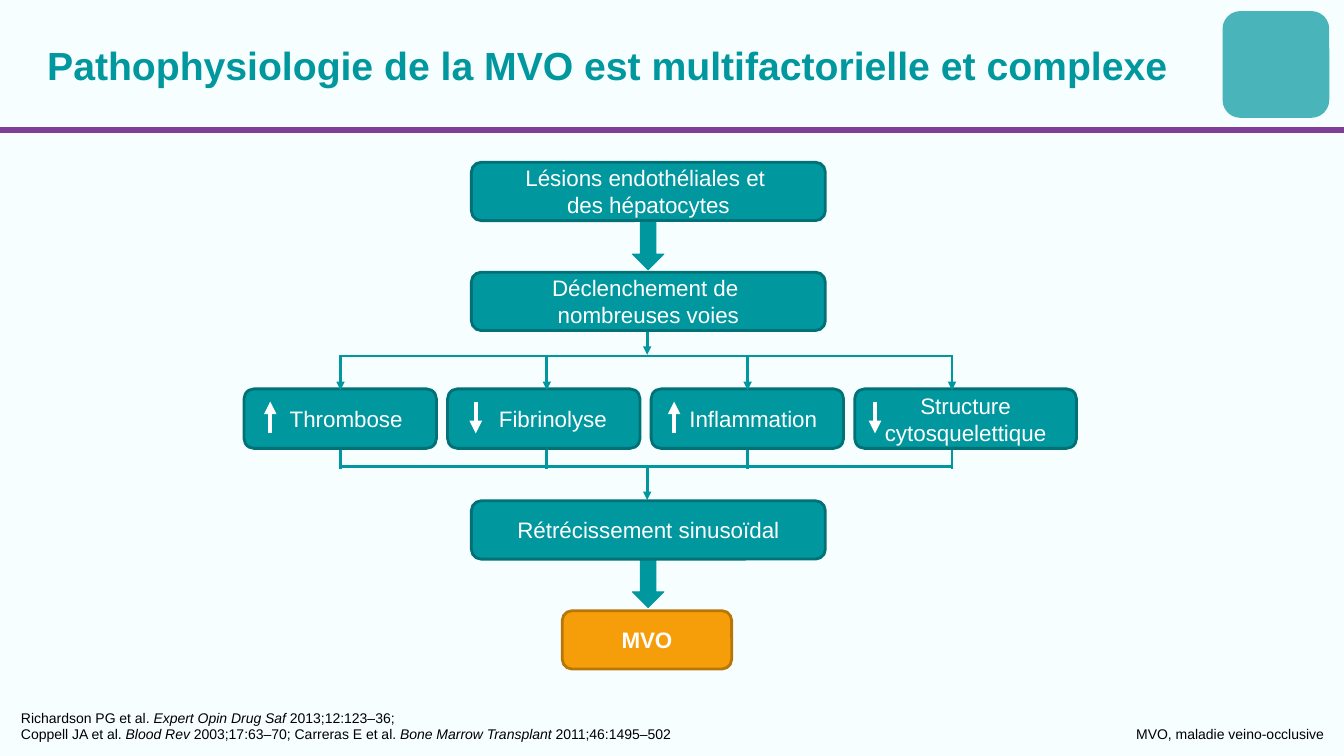
import pptx
import pptx.dml.color
import pptx.enum.shapes
import pptx.enum.text
import pptx.oxml
import pptx.oxml.ns
import pptx.util

Cm = pptx.util.Cm
Pt = pptx.util.Pt
RGBColor = pptx.dml.color.RGBColor
Shape = pptx.enum.shapes.MSO_SHAPE
Anchor = pptx.enum.text.MSO_ANCHOR
Align = pptx.enum.text.PP_ALIGN

PAPER = RGBColor(0xF7, 0xFE, 0xFF)
TEAL = RGBColor(0x00, 0x97, 0x9E)
DARK_TEAL = RGBColor(0x00, 0x71, 0x76)
ORANGE = RGBColor(0xF5, 0x9E, 0x09)
DARK_ORANGE = RGBColor(0xB8, 0x76, 0x07)
PURPLE = RGBColor(0x7F, 0x3F, 0x98)
WHITE = RGBColor(0xFF, 0xFF, 0xFF)
BLACK = RGBColor(0x00, 0x00, 0x00)

MIDDLE = 16.34
STEM = 16.31
STEP_HEIGHT = 1.47
PATHWAY_TOP = 9.8
PATHWAY_PITCH = 5.13


class FlowSlide:
    font_name = "Arial"

    def __init__(self, deck):
        self.page = deck.slides.add_slide(deck.slide_layouts[6])
        self.page.background.fill.solid()
        self.page.background.fill.fore_color.rgb = PAPER

    def set_text(self, frame, lines, size, color, bold=False, alignment=Align.LEFT, **layout):
        for name, value in {"word_wrap": True, **layout}.items():
            setattr(frame, name, value)
        para = frame.paragraphs[0]
        para.alignment = alignment
        for number, line in enumerate(lines):
            if number:
                para.add_line_break()
            for text, italic in line:
                span = para.add_run()
                span.text = text
                style = {"name": self.font_name, "size": Pt(size), "bold": bold, "italic": italic}
                for name, value in style.items():
                    setattr(span.font, name, value)
                span.font.color.rgb = color

    def text(self, place, lines, size, color, **layout):
        box = self.page.shapes.add_textbox(*map(Cm, place))
        self.set_text(box.text_frame, lines, size, color, **layout)

    def shape(self, kind, place, fill, border=None, width=2):
        box = self.page.shapes.add_shape(kind, *map(Cm, place))
        box.shadow.inherit = False
        box.fill.solid()
        box.fill.fore_color.rgb = fill
        if border is None:
            box.line.fill.background()
        else:
            box.line.color.rgb = border
            box.line.width = Pt(width)
        return box

    def step(self, place, lines, fill=TEAL, border=DARK_TEAL, bold=False, indent=0):
        box = self.shape(Shape.ROUNDED_RECTANGLE, place, fill, border)
        self.set_text(
            box.text_frame, [[(line, False)] for line in lines], 16, WHITE, bold,
            alignment=Align.CENTER, vertical_anchor=Anchor.MIDDLE,
            margin_left=Cm(0.25 + indent), margin_top=0, margin_bottom=0,
        )

    def block_arrow(self, top):
        self.shape(Shape.DOWN_ARROW, (MIDDLE - 0.4, top, 0.79, 1.19), TEAL, TEAL, 0.75)

    def badge(self, place):
        box = self.shape(Shape.ROUNDED_RECTANGLE, place, TEAL)
        color = box._element.spPr.find(".//" + pptx.oxml.ns.qn("a:srgbClr"))
        alpha = pptx.oxml.parse_xml(f'<a:alpha {pptx.oxml.ns.nsdecls("a")} val="70000"/>')
        color.append(alpha)

    def line(self, start, end, color=TEAL, width=2, arrow=False):
        kind = pptx.enum.shapes.MSO_CONNECTOR.STRAIGHT
        link = self.page.shapes.add_connector(kind, *map(Cm, start + end))
        link.line.color.rgb = color
        link.line.width = Pt(width)
        space = pptx.oxml.ns.nsdecls("a")
        properties = link._element.spPr
        if arrow:
            head = pptx.oxml.parse_xml(f'<a:tailEnd {space} type="triangle"/>')
            properties.find(pptx.oxml.ns.qn("a:ln")).append(head)
        properties.append(pptx.oxml.parse_xml(f"<a:effectLst {space}/>"))


def main():
    deck = pptx.Presentation()
    deck.slide_width = Cm(33.87)
    deck.slide_height = Cm(19.05)
    slide = FlowSlide(deck)

    slide.badge((30.81, 0.28, 2.69, 2.69))
    slide.line((0, 3.28), (33.87, 3.28), PURPLE, 4.5)
    slide.text(
        (0.94, 0.23, 29.9, 2.79),
        [[("Pathophysiologie de la MVO est multifactorielle et complexe", False)]],
        28, TEAL, bold=True, vertical_anchor=Anchor.MIDDLE,
    )
    references = [
        [("Richardson PG et al. ", False), ("Expert Opin Drug Saf ", True), ("2013;12:123–36; ", False)],
        [
            ("Coppell JA et al. ", False), ("Blood Rev ", True),
            ("2003;17:63–70; Carreras E et al. ", False),
            ("Bone Marrow Transplant ", True), ("2011;46:1495–502", False),
        ],
    ]
    slide.text((0.28, 18.03, 20.27, 0.81), references, 10, BLACK, vertical_anchor=Anchor.BOTTOM)
    slide.text(
        (13.34, 18.03, 20.27, 0.81), [[("MVO, maladie veino-occlusive", False)]],
        10, BLACK, vertical_anchor=Anchor.BOTTOM, alignment=Align.RIGHT,
    )

    branches = (8.58, 13.78, 18.84, 23.99)
    slide.line((STEM, 8.13), (STEM, 8.94), arrow=True)
    for bar in (8.97, 11.76):
        slide.line((branches[0], bar), (branches[-1], bar))
    for branch in branches:
        slide.line((branch, 11.81), (branch, 10.92))

    pathways = [
        ("Thrombose", 4.85, 0.3, 6.81, True),
        ("Fibrinolyse", 4.85, 0.46, 11.99, False),
        ("Inflammation", 4.85, 0.3, 16.99, True),
        ("Structure cytosquelettique", 5.59, 0, 22.05, False),
    ]
    for number, (name, width, indent, mark, rises) in enumerate(pathways):
        left = 6.15 + number * PATHWAY_PITCH
        slide.step((left, PATHWAY_TOP, width, 1.5), [name], indent=indent)
        high, low = (mark, 10.12), (mark, 10.92)
        start, end = (low, high) if rises else (high, low)
        slide.line(start, end, WHITE, 3, arrow=True)
    for branch in branches:
        slide.line((branch, 8.94), (branch, 9.83), arrow=True)
    slide.line((STEM, 11.79), (STEM, 12.6), arrow=True)

    for top in (5.61, 14.12):
        slide.block_arrow(top)
    stages = [
        (4.09, ["Lésions endothéliales et ", "des hépatocytes"]),
        (6.86, ["Déclenchement de ", "nombreuses voies"]),
        (12.62, ["Rétrécissement sinusoïdal"]),
    ]
    for top, lines in stages:
        slide.step((MIDDLE - 4.46, top, 8.92, STEP_HEIGHT), lines)
    slide.step((14.17, 15.39, 4.27, STEP_HEIGHT), ["MVO"], ORANGE, DARK_ORANGE, bold=True)

    deck.save("out.pptx")


if __name__ == "__main__":
    main()
